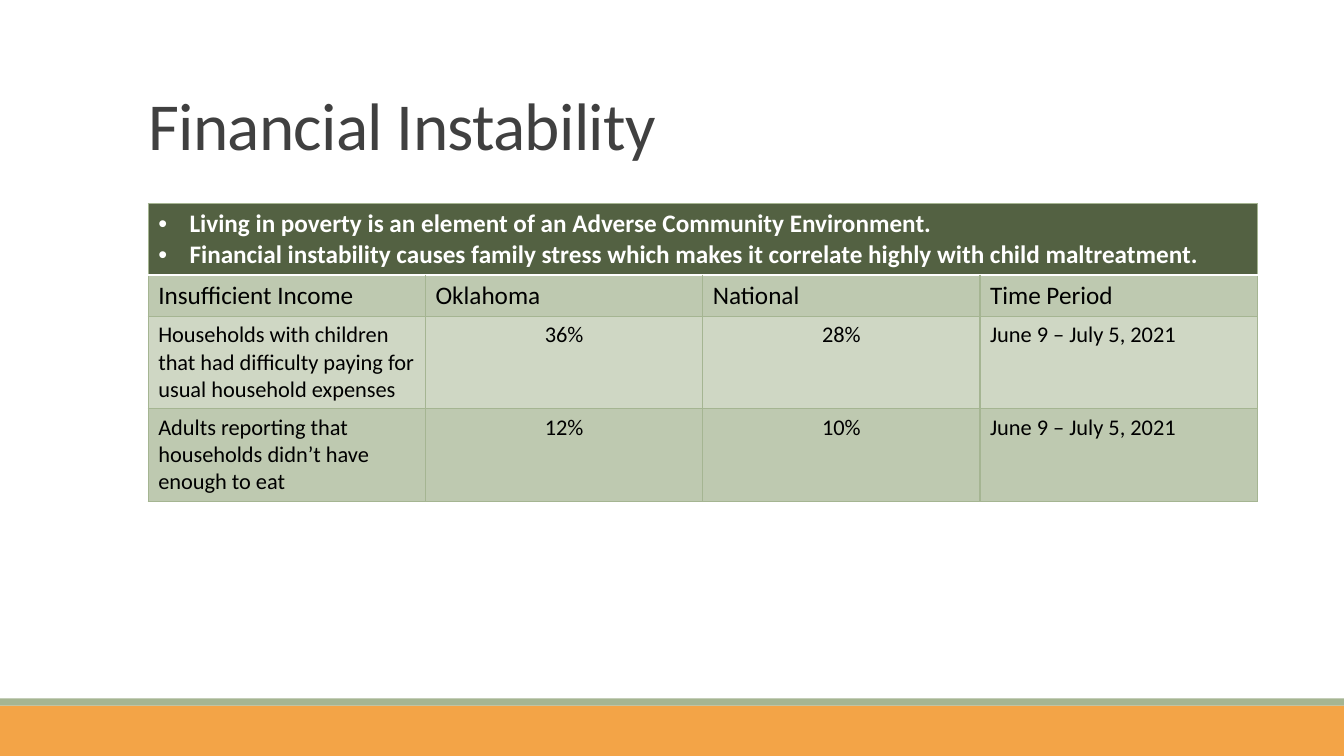
from dataclasses import dataclass

from lxml.etree import SubElement
from pptx import Presentation
from pptx.dml.color import RGBColor
from pptx.enum.shapes import MSO_SHAPE
from pptx.enum.text import MSO_ANCHOR, PP_ALIGN
from pptx.oxml.ns import qn
from pptx.slide import Slide
from pptx.table import Table, _Cell
from pptx.text.text import _Paragraph
from pptx.util import Emu, Inches, Pt

SLIDE_WIDTH = Inches(13.33)
SLIDE_HEIGHT = Inches(7.5)


@dataclass(frozen=True)
class Theme:
    font: str = "Calibri"
    title_size: int = 48
    heading_size: int = 18
    body_size: int = 16
    title: str = "404040"
    text: str = "000000"
    white: str = "FFFFFF"
    header: str = "536142"
    dark_row: str = "BEC9B0"
    light_row: str = "CFD7C4"
    sage: str = "A5B592"
    orange: str = "F3A447"


@dataclass(frozen=True)
class Band:
    top: float
    height: float
    color: str


@dataclass(frozen=True)
class TableRow:
    texts: tuple[str, ...]
    height: float
    size: int
    fill: str
    centered: tuple[int, ...] = ()


@dataclass(frozen=True)
class Grid:
    left: float = 1.47
    top: float = 2.02
    column_width: float = 2.75
    columns: int = 4

    @property
    def width(self) -> float:
        return self.column_width * self.columns


THEME = Theme()
GRID = Grid()
TITLE_INSET = 0.1
HEADER_HEIGHT = 0.7
BULLET_INDENT = Inches(0.31)

BANDS = (
    Band(7 / 7.5, 0.5 / 7.5, THEME.orange),
    Band(6.93 / 7.5, 0.07 / 7.5, THEME.sage),
)
KEY_POINTS = (
    "Living in poverty is an element of an Adverse Community Environment.",
    "Financial instability causes family stress which makes it correlate highly with child maltreatment.",
)
ROWS = (
    TableRow(
        ("Insufficient Income", "Oklahoma", "National", "Time Period"),
        0.41, THEME.heading_size, THEME.dark_row,
    ),
    TableRow(
        ("Households with children that had difficulty paying for usual household expenses",
         "36%", "28%", "June 9 – July 5, 2021"),
        0.91, THEME.body_size, THEME.light_row, (1, 2),
    ),
    TableRow(
        ("Adults reporting that households didn’t have enough to eat",
         "12%", "10%", "June 9 – July 5, 2021"),
        0.91, THEME.body_size, THEME.dark_row, (1, 2),
    ),
)


def add_run(paragraph: _Paragraph, text: str, size: int, color: str, bold: bool = False):
    run = paragraph.add_run()
    run.text = text
    run.font.name = THEME.font
    run.font.size = Pt(size)
    run.font.bold = bold
    run.font.color.rgb = RGBColor.from_string(color)
    return run


def add_band(slide: Slide, band: Band) -> None:
    shape = slide.shapes.add_shape(
        MSO_SHAPE.RECTANGLE, 0, Emu(int(SLIDE_HEIGHT * band.top)),
        SLIDE_WIDTH, Emu(int(SLIDE_HEIGHT * band.height)),
    )
    shape.shadow.inherit = False
    shape.fill.solid()
    shape.fill.fore_color.rgb = RGBColor.from_string(band.color)
    shape.line.fill.background()


def add_title(slide: Slide, text: str) -> None:
    title = slide.shapes.title
    title.left, title.top = Inches(GRID.left - TITLE_INSET), Inches(0.83)
    title.width, title.height = Inches(GRID.width), Inches(0.85)
    frame = title.text_frame
    frame.word_wrap = True
    frame.vertical_anchor = MSO_ANCHOR.BOTTOM
    paragraph = frame.paragraphs[0]
    paragraph.alignment = PP_ALIGN.LEFT
    paragraph.line_spacing = 0.85
    run = add_run(paragraph, text, THEME.title_size, THEME.title)
    run._r.get_or_add_rPr().set("spc", "-50")


def style_cell(cell: _Cell, fill: str, top: str = THEME.sage, bottom: str = THEME.sage) -> None:
    properties = cell._tc.get_or_add_tcPr()
    borders = {"L": THEME.sage, "R": THEME.sage, "T": top, "B": bottom}
    for side, color in borders.items():
        width = Pt(1.25 if color == THEME.white else 1)
        line = SubElement(properties, qn(f"a:ln{side}"), w=str(width))
        solid = SubElement(line, qn("a:solidFill"))
        SubElement(solid, qn("a:srgbClr"), val=color)
    cell.fill.solid()
    cell.fill.fore_color.rgb = RGBColor.from_string(fill)


def add_bullet(paragraph: _Paragraph) -> None:
    properties = paragraph._p.get_or_add_pPr()
    properties.set("marL", str(BULLET_INDENT))
    properties.set("indent", str(-BULLET_INDENT))
    SubElement(properties, qn("a:buFont"), typeface="Arial")
    SubElement(properties, qn("a:buChar"), char="•")


def fill_header(table: Table) -> None:
    table.rows[0].height = Inches(HEADER_HEIGHT)
    for column in range(GRID.columns):
        style_cell(table.cell(0, column), THEME.header, bottom=THEME.white)
    header = table.cell(0, 0)
    header.merge(table.cell(0, GRID.columns - 1))
    frame = header.text_frame
    for index, point in enumerate(KEY_POINTS):
        paragraph = frame.add_paragraph() if index else frame.paragraphs[0]
        add_bullet(paragraph)
        add_run(paragraph, point, THEME.heading_size, THEME.white, bold=True)


def fill_row(table: Table, index: int, row: TableRow) -> None:
    table.rows[index].height = Inches(row.height)
    top = THEME.white if index == 1 else THEME.sage
    for column, text in enumerate(row.texts):
        cell = table.cell(index, column)
        style_cell(cell, row.fill, top=top)
        paragraph = cell.text_frame.paragraphs[0]
        paragraph.alignment = PP_ALIGN.CENTER if column in row.centered else PP_ALIGN.LEFT
        add_run(paragraph, text, row.size, THEME.text)


def add_income_table(slide: Slide) -> None:
    height = HEADER_HEIGHT + sum(row.height for row in ROWS)
    table = slide.shapes.add_table(
        len(ROWS) + 1, GRID.columns, Inches(GRID.left), Inches(GRID.top),
        Inches(GRID.width), Inches(height),
    ).table
    table.first_row = False
    table.horz_banding = False
    for column in table.columns:
        column.width = Inches(GRID.column_width)
    fill_header(table)
    for index, row in enumerate(ROWS, start=1):
        fill_row(table, index, row)


def main() -> None:
    presentation = Presentation()
    presentation.slide_width = SLIDE_WIDTH
    presentation.slide_height = SLIDE_HEIGHT
    slide = presentation.slides.add_slide(presentation.slide_layouts.get_by_name("Title Only"))
    for band in BANDS:
        add_band(slide, band)
    add_title(slide, "Financial Instability")
    add_income_table(slide)
    presentation.save("out.pptx")


if __name__ == "__main__":
    main()
